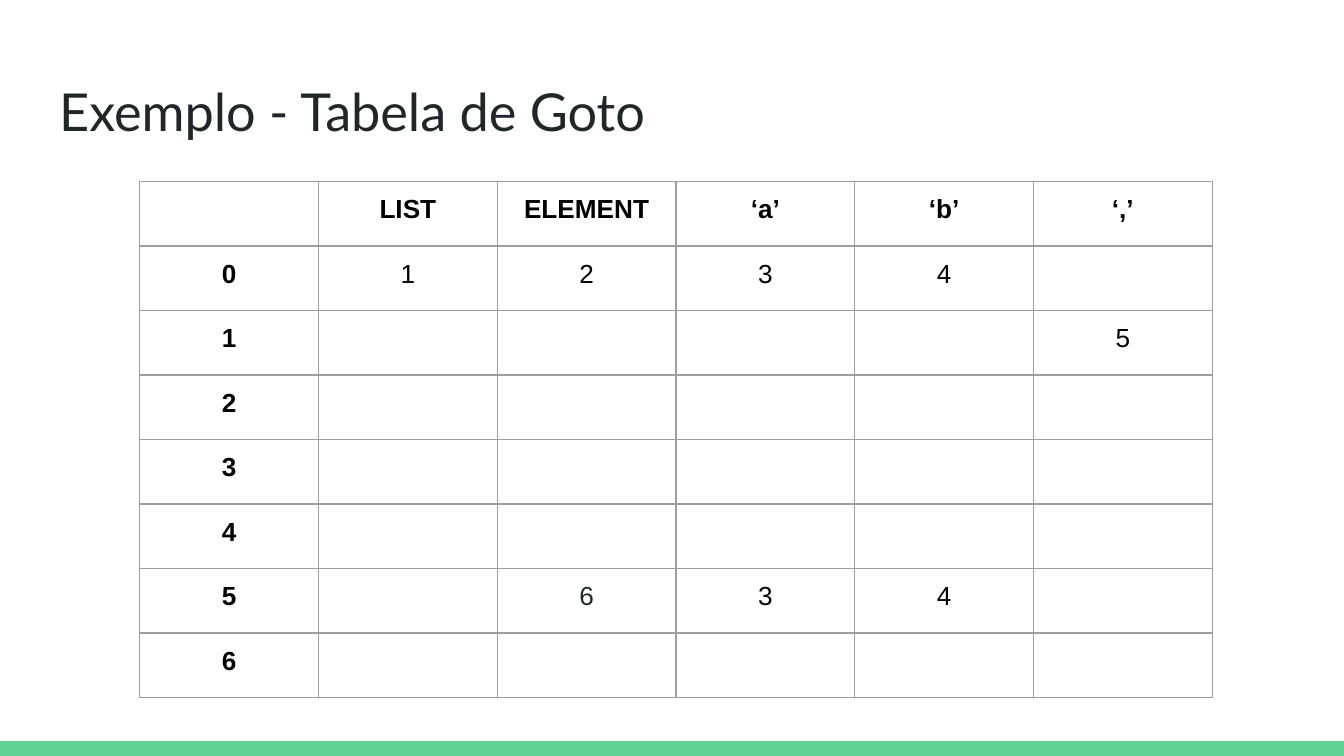
"""Build a slide with the goto table of a small list grammar."""
import pptx
import pptx.dml.color
import pptx.enum.shapes
import pptx.enum.text
import pptx.oxml
import pptx.oxml.ns
import pptx.util

TITLE = "Exemplo - Tabela de Goto"
SYMBOLS = ["LIST", "ELEMENT", "‘a’", "‘b’", "‘,’"]
GOTO = [
    ["1", "2", "3", "4", ""],
    ["", "", "", "", "5"],
    ["", "", "", "", ""],
    ["", "", "", "", ""],
    ["", "", "", "", ""],
    ["", "6", "3", "4", ""],
    ["", "", "", "", ""],
]
COLORS = {"bar": "63D297", "title": "202729", "text": "000000", "border": "9E9E9E"}
ACCENTED = (6, 2)

WIDTH = 10
HEIGHT = WIDTH * 9 / 16
BAR_HEIGHT = 0.11
TITLE_BOX = (0.34, 0.49, 9.32, 0.63)
TABLE_LEFT, TABLE_TOP = 1.04, 1.35
COLUMN_WIDTH, ROW_HEIGHT = 1.33, 0.48
INSET = pptx.util.Inches(0.1)


def color(name):
    return pptx.dml.color.RGBColor.from_string(COLORS[name])


def inches(*lengths):
    return [pptx.util.Inches(length) for length in lengths]


def set_font(font, name, size, shade, bold=False):
    font.name = name
    font.size = pptx.util.Pt(size)
    font.bold = bold
    font.color.rgb = color(shade)


def set_insets(holder):
    holder.margin_left = holder.margin_right = INSET
    holder.margin_top = holder.margin_bottom = INSET


def add_borders(cell):
    properties = cell._tc.get_or_add_tcPr()
    for position, side in enumerate(("lnL", "lnR", "lnT", "lnB")):
        line = pptx.oxml.parse_xml(
            f'<a:{side} {pptx.oxml.ns.nsdecls("a")} w="{pptx.util.Pt(0.75)}">'
            f'<a:solidFill><a:srgbClr val="{COLORS["border"]}"/></a:solidFill></a:{side}>'
        )
        properties.insert(position, line)


def add_bar(slide):
    bar = slide.shapes.add_shape(
        pptx.enum.shapes.MSO_SHAPE.RECTANGLE,
        *inches(0, HEIGHT - BAR_HEIGHT, WIDTH, BAR_HEIGHT),
    )
    bar.shadow.inherit = False
    bar.fill.solid()
    bar.fill.fore_color.rgb = color("bar")
    bar.line.fill.background()


def add_title(slide):
    title = slide.shapes.title
    title.left, title.top, title.width, title.height = inches(*TITLE_BOX)
    frame = title.text_frame
    frame.text = TITLE
    frame.word_wrap = True
    frame.auto_size = pptx.enum.text.MSO_AUTO_SIZE.NONE
    frame.vertical_anchor = pptx.enum.text.MSO_ANCHOR.TOP
    set_insets(frame)
    para = frame.paragraphs[0]
    para.alignment = pptx.enum.text.PP_ALIGN.LEFT
    set_font(para.font, "Lato", 28, "title")


def add_goto_table(slide):
    rows = [["", *SYMBOLS]] + [[str(state), *moves] for state, moves in enumerate(GOTO)]
    row_count, column_count = len(rows), len(rows[0])
    size = (column_count * COLUMN_WIDTH, row_count * ROW_HEIGHT)
    table = slide.shapes.add_table(
        row_count, column_count, *inches(TABLE_LEFT, TABLE_TOP, *size)
    ).table
    table.first_row = table.horz_banding = False
    for column in table.columns:
        column.width = pptx.util.Inches(COLUMN_WIDTH)
    for row in table.rows:
        row.height = pptx.util.Inches(ROW_HEIGHT)
    for row_index, texts in enumerate(rows):
        for column_index, text in enumerate(texts):
            cell = table.cell(row_index, column_index)
            cell.fill.background()
            add_borders(cell)
            if text:
                cell.text = text
                set_insets(cell)
                para = cell.text_frame.paragraphs[0]
                para.alignment = pptx.enum.text.PP_ALIGN.CENTER
                shade = "title" if (row_index, column_index) == ACCENTED else "text"
                is_header = row_index == 0 or column_index == 0
                set_font(para.font, "Arial", 14, shade, is_header)


def main():
    deck = pptx.Presentation()
    deck.slide_width, deck.slide_height = inches(WIDTH, HEIGHT)
    slide = deck.slides.add_slide(deck.slide_layouts[5])
    add_bar(slide)
    add_title(slide)
    add_goto_table(slide)
    deck.save("out.pptx")


if __name__ == "__main__":
    main()
